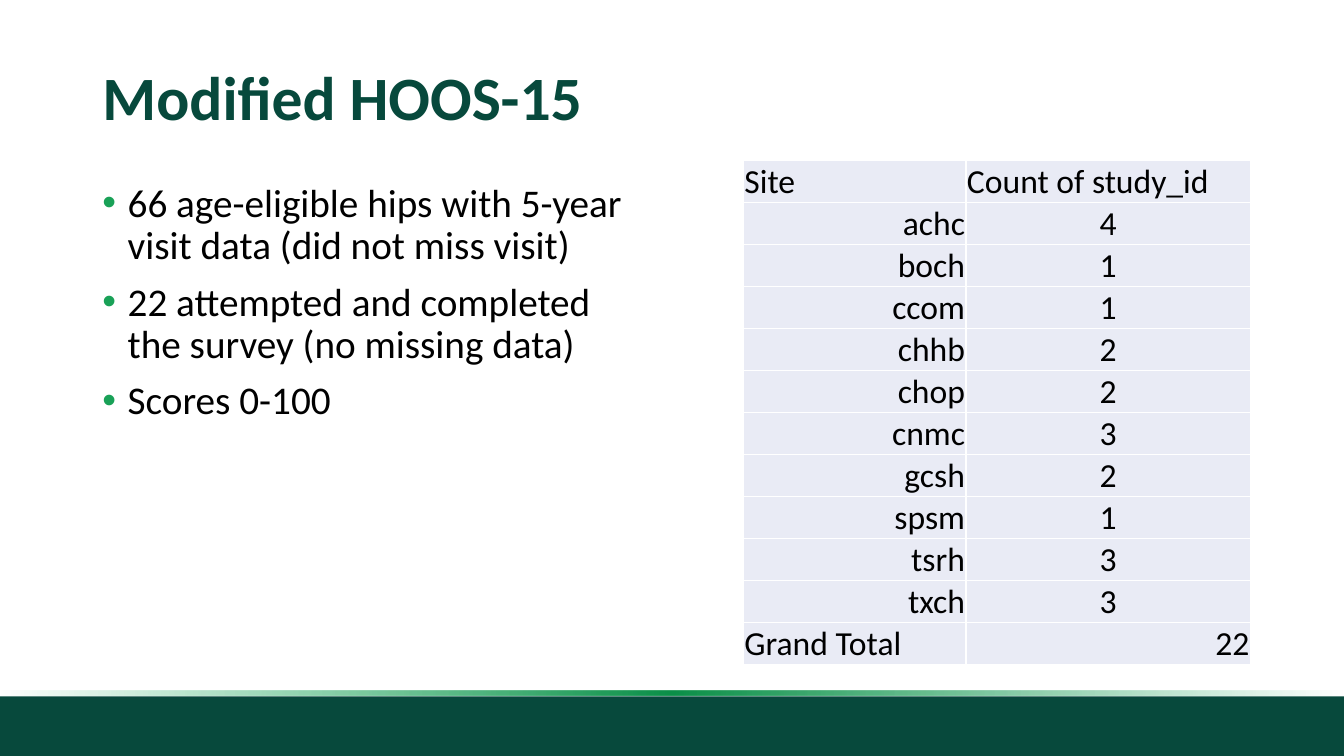
from dataclasses import dataclass
from typing import Any, Optional

import lxml.etree
import pptx
import pptx.dml.color
import pptx.enum.shapes
import pptx.enum.text
import pptx.oxml.ns
import pptx.util

RGB = pptx.dml.color.RGBColor
ALIGN = pptx.enum.text.PP_ALIGN
ANCHOR = pptx.enum.text.MSO_ANCHOR
qn = pptx.oxml.ns.qn

PINE = RGB(0x07, 0x49, 0x3C)
LEAF = RGB(0x19, 0xA1, 0x57)
MINT = RGB(0x0D, 0x9D, 0x4F)
MOSS = RGB(0x0C, 0x90, 0x49)
JADE = RGB(0x0F, 0xAB, 0x56)
MIST = RGB(0xE9, 0xEB, 0xF5)
WHITE = RGB(0xFF, 0xFF, 0xFF)
BLACK = RGB(0, 0, 0)

WIDE = pptx.util.Inches(13.33)
HIGH = pptx.util.Inches(7.5)
COLS, ROWS = 160, 90


@dataclass(frozen=True)
class Area:
    col: float
    row: float
    wide: float
    high: float

    def place(self) -> tuple[int, int, int, int]:
        return across(self.col), down(self.row), across(self.wide), down(self.high)


@dataclass(frozen=True)
class Site:
    name: str
    count: str
    left: Any = ALIGN.RIGHT
    right: Any = ALIGN.CENTER


@dataclass(frozen=True)
class Stop:
    pos: int
    color: RGB
    alpha: int


TITLE = Area(11, 4.8, 138, 14.3)
BODY = Area(11, 21.25, 64.5, 59.75)
GRID = Area(88.5, 19.1, 60.35, 59)
BAND = Area(0, 82.9, 160, 7.1)
GLOW = Area(0, 82.2, 160, 0.65)
SPLIT = (26.5, 33.85)

POINTS = (
    "66 age-eligible hips with 5-year visit data (did not miss visit)",
    "22 attempted and completed the survey (no missing data)",
    "Scores 0-100",
)
SITES = (
    Site("Site", "Count of study_id", ALIGN.LEFT, ALIGN.LEFT),
    Site("achc", "4"),
    Site("boch", "1"),
    Site("ccom", "1"),
    Site("chhb", "2"),
    Site("chop", "2"),
    Site("cnmc", "3"),
    Site("gcsh", "2"),
    Site("spsm", "1"),
    Site("tsrh", "3"),
    Site("txch", "3"),
    Site("Grand Total", "22", ALIGN.LEFT, ALIGN.RIGHT),
)
STOPS = (Stop(0, MINT, 0), Stop(50, MOSS, 100), Stop(100, JADE, 0))


def across(cols: float) -> int:
    return round(WIDE * cols / COLS)


def down(rows: float) -> int:
    return round(HIGH * rows / ROWS)


def add(node: Any, tag: str, **attrs: str) -> Any:
    return lxml.etree.SubElement(node, qn(tag), attrs)


def write(para: Any, text: str, *, size: float, color: RGB = BLACK,
          bold: bool = False, align: Any = ALIGN.LEFT, line: float = 1.0,
          before: float = 0, bullet: Optional[RGB] = None) -> None:
    if bullet is not None:
        props = para._p.get_or_add_pPr()
        indent = pptx.util.Inches(0.25)
        props.set("marL", str(indent))
        props.set("indent", str(-indent))
        add(add(props, "a:buClr"), "a:srgbClr", val=str(bullet))
        add(props, "a:buFont", typeface="Arial")
        add(props, "a:buChar", char="•")
    para.alignment = align
    para.line_spacing = line
    para.space_before = pptx.util.Pt(before)
    run = para.add_run()
    run.text = text
    run.font.name = "Calibri"
    run.font.size = pptx.util.Pt(size)
    run.font.bold = bold
    run.font.color.rgb = color


def frame(shape: Any, area: Area, anchor: Any) -> Any:
    shape.left, shape.top, shape.width, shape.height = area.place()
    text = shape.text_frame
    text.word_wrap = True
    text.auto_size = pptx.enum.text.MSO_AUTO_SIZE.NONE
    text.vertical_anchor = anchor
    return text


def strip(slide: Any, area: Area) -> Any:
    shape = slide.shapes.add_shape(
        pptx.enum.shapes.MSO_SHAPE.RECTANGLE, *area.place())
    shape.shadow.inherit = False
    shape.line.fill.background()
    return shape


def fade(shape: Any, stops: tuple[Stop, ...]) -> None:
    shape.fill.gradient()
    shape.fill.gradient_angle = 180
    ramp = shape._element.spPr.find(qn("a:gradFill")).find(qn("a:gsLst"))
    for old in list(ramp):
        ramp.remove(old)
    for stop in stops:
        mark = add(ramp, "a:gs", pos=str(stop.pos * 1000))
        tint = add(mark, "a:srgbClr", val=str(stop.color))
        add(tint, "a:alpha", val=str(stop.alpha * 1000))


def style(cell: Any) -> None:
    props = cell._tc.get_or_add_tcPr()
    for side in ("a:lnL", "a:lnR", "a:lnT", "a:lnB"):
        edge = add(props, side, w=str(pptx.util.Pt(1)))
        add(add(edge, "a:solidFill"), "a:srgbClr", val=str(WHITE))
    cell.fill.solid()
    cell.fill.fore_color.rgb = MIST
    cell.vertical_anchor = ANCHOR.BOTTOM
    cell.margin_left = cell.margin_right = pptx.util.Inches(0.01)
    cell.margin_top = pptx.util.Inches(0.01)
    cell.margin_bottom = 0


def tally(slide: Any, sites: tuple[Site, ...]) -> None:
    table = slide.shapes.add_table(len(sites), len(SPLIT), *GRID.place()).table
    for col, wide in zip(table.columns, SPLIT):
        col.width = across(wide)
    for row, site in zip(table.rows, sites):
        row.height = down(GRID.high / len(sites))
        pairs = ((site.name, site.left), (site.count, site.right))
        for cell, (text, align) in zip(row.cells, pairs):
            style(cell)
            write(cell.text_frame.paragraphs[0], text, size=24, align=align)


def main() -> None:
    deck = pptx.Presentation()
    deck.slide_width, deck.slide_height = WIDE, HIGH
    slide = deck.slides.add_slide(deck.slide_layouts[1])

    band = strip(slide, BAND)
    band.fill.solid()
    band.fill.fore_color.rgb = PINE
    fade(strip(slide, GLOW), STOPS)

    title = frame(slide.shapes.title, TITLE, ANCHOR.MIDDLE)
    write(title.paragraphs[0], "Modified HOOS-15", size=44, color=PINE,
          bold=True, line=0.9)

    body = frame(slide.placeholders[1], BODY, ANCHOR.TOP)
    for num, point in enumerate(POINTS):
        para = body.add_paragraph() if num else body.paragraphs[0]
        write(para, point, size=28, line=0.9, before=10 if num else 0,
              bullet=LEAF)

    tally(slide, SITES)
    deck.save("out.pptx")


if __name__ == "__main__":
    main()
